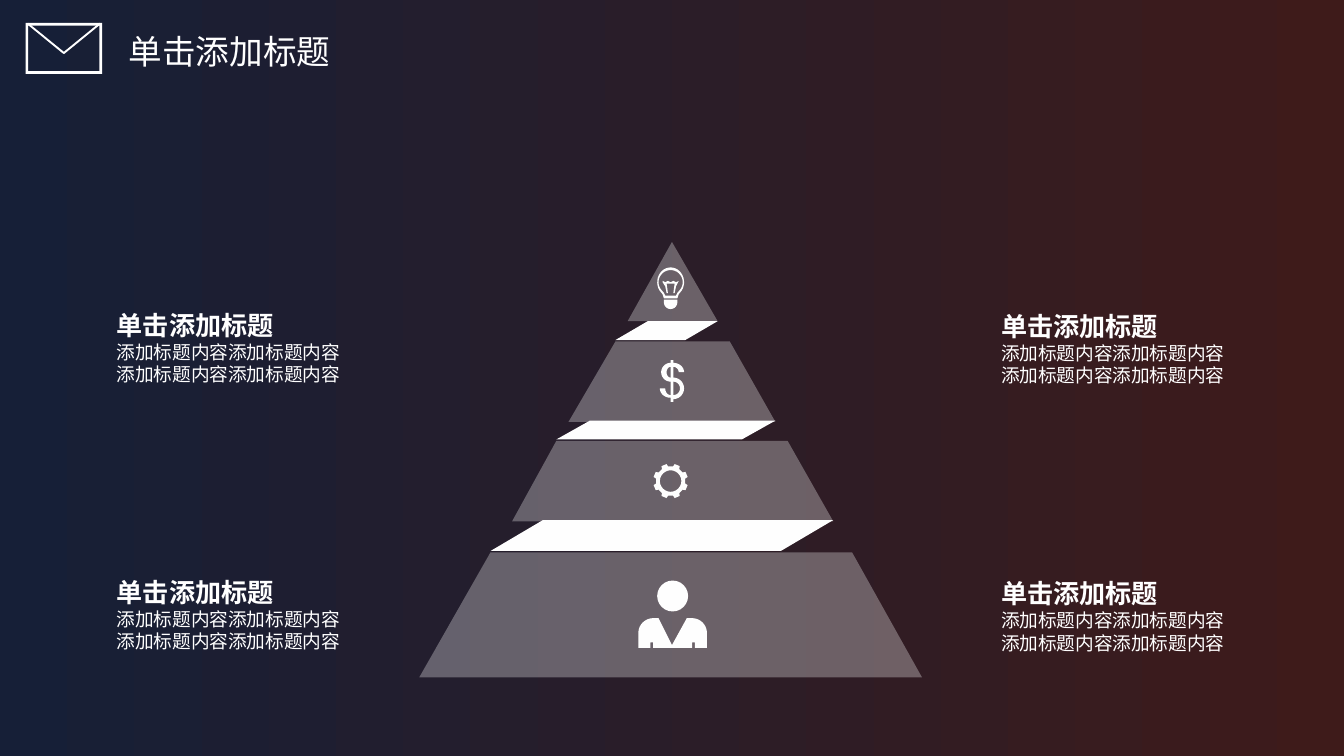
from math import cos, radians, sin

from lxml.etree import SubElement
from pptx import Presentation
from pptx.dml.color import RGBColor
from pptx.enum.shapes import MSO_SHAPE
from pptx.enum.text import MSO_AUTO_SIZE
from pptx.oxml.ns import qn
from pptx.util import Inches, Pt

NAVY = RGBColor(0x16, 0x1F, 0x37)
MAROON = RGBColor(0x3E, 0x1B, 0x1A)
WHITE = RGBColor(0xFF, 0xFF, 0xFF)
OFF_WHITE = RGBColor(0xFE, 0xFE, 0xFE)
FONT = "Noto Sans CJK SC"


def arc(cx, cy, rx, ry, start, end, steps=24):
    """Points on an ellipse; angles in degrees, clockwise from the right."""
    angles = [radians(start + (end - start) * i / steps) for i in range(steps + 1)]
    return [(cx + rx * cos(a), cy + ry * sin(a)) for a in angles]


def add_outline(shapes, contours, color=OFF_WHITE, opacity=100):
    """Fill closed contours given in inches; an inner contour makes a hole."""
    fb = None
    for contour in contours:
        points = [(Inches(x), Inches(y)) for x, y in contour]
        if fb is None:
            fb = shapes.build_freeform(*points[0])
        else:
            fb.move_to(*points[0])
        fb.add_line_segments(points[1:], close=True)
    sp = fb.convert_to_shape()
    sp.shadow.inherit = False
    sp.line.fill.background()
    sp.fill.solid()
    sp.fill.fore_color.rgb = color
    if opacity < 100:
        clr = sp._element.spPr.find(".//" + qn("a:srgbClr"))
        SubElement(clr, qn("a:alpha"), val=str(opacity * 1000))


prs = Presentation()
prs.slide_width = Inches(10)
prs.slide_height = prs.slide_width * 9 // 16
s = prs.slides.add_slide(prs.slide_layouts[6])

fill = s.background.fill
fill.gradient()
fill.gradient_angle = 0
for stop, color in zip(fill.gradient_stops, (NAVY, MAROON)):
    stop.color.rgb = color

# Envelope
envelope = s.shapes.add_group_shape()
frame = [[(l, t), (r, t), (r, b), (l, b)]
         for l, t, r, b in ((0.19, 0.17, 0.76, 0.55), (0.21, 0.19, 0.74, 0.53))]
right_flap = [(0.47, 0.39), (0.74, 0.17), (0.75, 0.18), (0.48, 0.4), (0.47, 0.4)]
left_flap = [(0.48, 0.39), (0.21, 0.17), (0.2, 0.18), (0.47, 0.4), (0.48, 0.4)]
for contours in (frame, [right_flap], [left_flap]):
    add_outline(envelope.shapes, contours, WHITE)

# White folds between the tiers: top left, top right, bottom right, bottom left
for top, bottom, xs in (
    (3.87, 4.1, (4.04, 6.2, 5.81, 3.65)),
    (3.13, 3.27, (4.39, 5.77, 5.52, 4.14)),
    (2.39, 2.53, (4.82, 5.34, 5.1, 4.58)),
):
    add_outline(s.shapes, [list(zip(xs, (top, top, bottom, bottom)))])

# Icons, each a list of outlines
bulb = [
    arc(4.99, 2.1, 0.1, 0.11, 145, 395)
    + [(5.05, 2.19), (5.04, 2.22), (4.94, 2.22), (4.93, 2.19)],
    arc(4.99, 2.1, 0.09, 0.09, 145, 395)
    + [(5.04, 2.18), (5.03, 2.2), (4.95, 2.2), (4.94, 2.18)],
]
bulb_base = [(4.94, 2.23), (5.04, 2.23)] + arc(4.99, 2.25, 0.05, 0.05, 0, 180)
filament = [
    (4.93, 2.09), (4.95, 2.1), (4.97, 2.09), (4.99, 2.1), (5.01, 2.09), (5.03, 2.1),
    (5.05, 2.09), (5.03, 2.13), (5.02, 2.18), (5.01, 2.18), (5.02, 2.11),
    (4.96, 2.11), (4.97, 2.18), (4.96, 2.18), (4.95, 2.13), (4.93, 2.1),
]
# The S and its stroke share one outline: bar ends above and below, gaps as holes
dollar = [
    [(4.99, 2.68), (5.01, 2.68), (5.01, 2.7)] + arc(5.01, 2.77, 0.08, 0.07, -90, 0)
    + [(5.05, 2.77)] + arc(5.01, 2.77, 0.04, 0.04, 0, -90)
    + [(5.01, 2.81)] + arc(5.01, 2.89, 0.08, 0.08, -90, 90)
    + [(5.01, 2.99), (4.99, 2.99), (4.99, 2.96)]
    + arc(4.99, 2.89, 0.08, 0.07, 90, 180) + [(4.95, 2.89)]
    + arc(4.99, 2.89, 0.04, 0.05, 180, 90)
    + [(4.99, 2.84)] + arc(4.99, 2.77, 0.07, 0.07, 90, 270),
    arc(4.99, 2.77, 0.03, 0.04, 90, 270),
    arc(5.01, 2.89, 0.05, 0.05, -90, 90),
]
gear = []
for tooth in range(8):
    middle = 22.5 + 45 * tooth
    for offset, radius in ((-13, 0.11), (-9, 0.13), (9, 0.13), (13, 0.11)):
        angle = radians(middle + offset)
        gear.append((4.99 + radius * cos(angle), 3.58 + radius * sin(angle)))
gear_hole = arc(4.99, 3.58, 0.08, 0.08, 0, 360)
person = (
    [(4.75, 4.82)] + arc(4.86, 4.71, 0.11, 0.11, 180, 270)
    + [(4.9, 4.6), (5, 4.8), (5.11, 4.6)] + arc(5.15, 4.71, 0.11, 0.11, 270, 360)
    + [(5.26, 4.82), (5.17, 4.82), (5.17, 4.78), (5.15, 4.78), (5.15, 4.82),
       (4.86, 4.82), (4.86, 4.78), (4.84, 4.78), (4.84, 4.82)]
)

# Pyramid tiers from the top down
for tier, icon in (
    ([(5, 1.8), (5.34, 2.39), (4.67, 2.39)], [bulb, [bulb_base], [filament]]),
    ([(4.58, 2.54), (5.43, 2.54), (5.77, 3.14), (4.23, 3.14)], [dollar]),
    ([(4.14, 3.28), (5.86, 3.28), (6.2, 3.88), (3.81, 3.88)], [[gear, gear_hole]]),
    ([(3.65, 4.11), (6.34, 4.11), (6.86, 5.04), (3.12, 5.04)], [[person]]),
):
    group = s.shapes.add_group_shape()
    add_outline(group.shapes, [tier], WHITE, opacity=30)
    for contours in icon:
        add_outline(group.shapes, contours)

head = group.shapes.add_shape(
    MSO_SHAPE.OVAL, Inches(4.89), Inches(4.32), Inches(0.23), Inches(0.23))
head.shadow.inherit = False
head.fill.solid()
head.fill.fore_color.rgb = OFF_WHITE
head.line.fill.background()

# Title and captions
TITLE = {"size": Pt(18), "bold": False, "name": FONT}
HEADING = {"size": Pt(14), "bold": True, "name": FONT}
BODY = {"size": Pt(10), "bold": False, "name": FONT}
title = [("单击添加标题", TITLE)]
caption = [("单击添加标题", HEADING)] + [("添加标题内容添加标题内容", BODY)] * 2

for left, top, width, height, wrap, lines in (
    (0.86, 0.18, 2.16, 0.4, True, title),
    (0.77, 2.25, 1.88, 0.84, False, caption),
    (0.77, 4.24, 1.88, 0.84, False, caption),
    (7.35, 2.26, 1.88, 0.84, False, caption),
    (7.35, 4.25, 1.88, 0.84, False, caption),
):
    tf = s.shapes.add_textbox(
        Inches(left), Inches(top), Inches(width), Inches(height)).text_frame
    tf.word_wrap = wrap
    tf.auto_size = MSO_AUTO_SIZE.SHAPE_TO_FIT_TEXT
    for i, (text, style) in enumerate(lines):
        p = tf.add_paragraph() if i else tf.paragraphs[0]
        r = p.add_run()
        r.text = text
        for key, value in style.items():
            setattr(r.font, key, value)
        r.font.color.rgb = WHITE
        SubElement(r._r.get_or_add_rPr(), qn("a:ea"), typeface=FONT)

prs.save("out.pptx")
